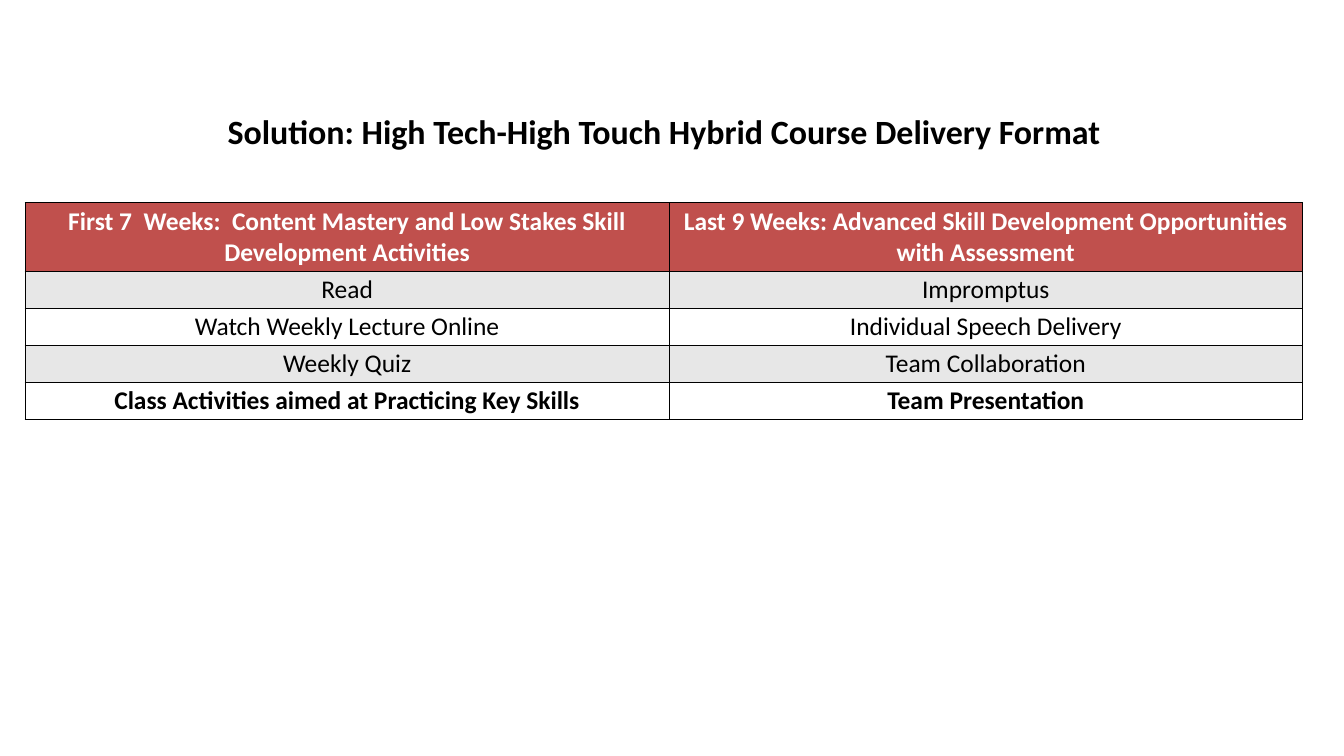
import pptx
import pptx.dml.color
import pptx.enum.text
import pptx.oxml
import pptx.oxml.ns
import pptx.util
from pptx.util import Cm

FONT = "Calibri"
BLACK, WHITE, RED, GREY = "000000", "FFFFFF", "C0504D", "E7E7E7"
COLUMN_WIDTHS = (Cm(26.77), Cm(26.31))
HEADER_HEIGHT, ROW_HEIGHT = Cm(2.83), Cm(1.54)
COURSE_PLAN = [
    ("First 7  Weeks:  Content Mastery and Low Stakes Skill Development Activities",
     "Last 9 Weeks: Advanced Skill Development Opportunities with Assessment"),
    ("Read", "Impromptus"),
    ("Watch Weekly Lecture Online", "Individual Speech Delivery"),
    ("Weekly Quiz", "Team Collaboration"),
    ("Class Activities aimed at Practicing Key Skills", "Team Presentation"),
]


def rgb(color):
    return pptx.dml.color.RGBColor.from_string(color)


def write_text(frame, text, size=30, color=BLACK, bold=False):
    frame.word_wrap = True
    paragraph = frame.paragraphs[0]
    paragraph.alignment = pptx.enum.text.PP_ALIGN.CENTER
    run = paragraph.add_run()
    run.text = text
    run.font.name = FONT
    run.font.size = pptx.util.Pt(size)
    run.font.bold = bold
    run.font.color.rgb = rgb(color)


def add_title(slide, text):
    title = slide.shapes.add_textbox(Cm(0), Cm(4.27), Cm(55.19), Cm(2.34))
    title.text_frame.vertical_anchor = pptx.enum.text.MSO_ANCHOR.MIDDLE
    write_text(title.text_frame, text, size=40, bold=True)


def add_borders(cell, color=BLACK, width=1):
    """Draw all four cell edges; call before filling the cell."""
    properties = cell._tc.get_or_add_tcPr()
    for edge in ("lnL", "lnR", "lnT", "lnB"):
        properties.append(pptx.oxml.parse_xml(
            f'<a:{edge} {pptx.oxml.ns.nsdecls("a")} w="{pptx.util.Pt(width)}">'
            f'<a:solidFill><a:srgbClr val="{color}"/></a:solidFill></a:{edge}>'))


def add_course_table(slide, plan):
    height = HEADER_HEIGHT + ROW_HEIGHT * (len(plan) - 1)
    table = slide.shapes.add_table(len(plan), len(COLUMN_WIDTHS), Cm(1.04), Cm(8.43),
                                   sum(COLUMN_WIDTHS), height).table
    for column, width in zip(table.columns, COLUMN_WIDTHS):
        column.width = width
    last = len(plan) - 1
    for index, activities in enumerate(plan):
        is_header = index == 0
        table.rows[index].height = HEADER_HEIGHT if is_header else ROW_HEIGHT
        fill = RED if is_header else GREY if index % 2 else WHITE
        for cell, activity in zip(table.rows[index].cells, activities):
            add_borders(cell)
            cell.fill.solid()
            cell.fill.fore_color.rgb = rgb(fill)
            write_text(cell.text_frame, activity, color=WHITE if is_header else BLACK,
                       bold=index in (0, last))


def main():
    presentation = pptx.Presentation()
    presentation.slide_width = Cm(55.85)
    presentation.slide_height = Cm(31.42)
    slide = presentation.slides.add_slide(presentation.slide_layouts[6])
    add_title(slide, "Solution: High Tech-High Touch Hybrid Course Delivery Format")
    add_course_table(slide, COURSE_PLAN)
    presentation.save("out.pptx")


if __name__ == "__main__":
    main()
